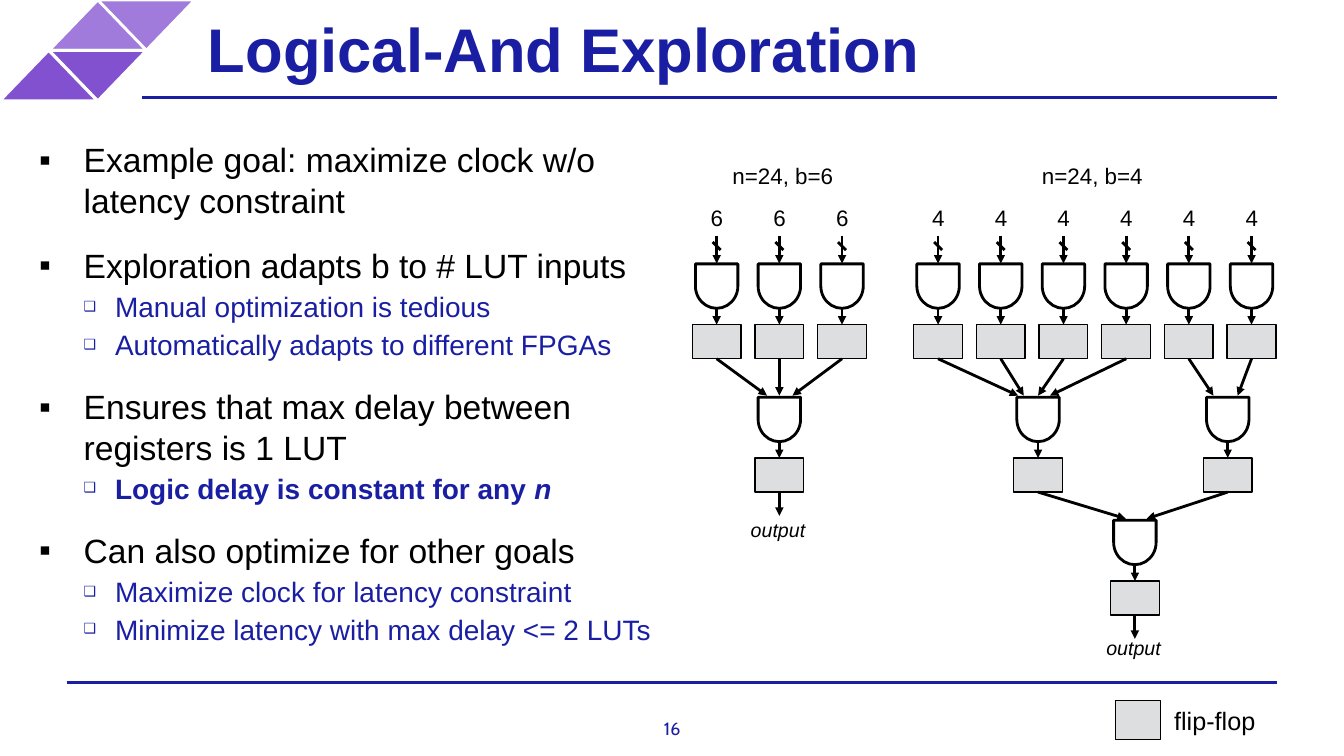
from dataclasses import dataclass

from lxml.etree import SubElement
from pptx import Presentation
from pptx.dml.color import RGBColor
from pptx.enum.shapes import MSO_CONNECTOR, MSO_SHAPE
from pptx.enum.text import MSO_ANCHOR as Anchor, PP_ALIGN as Align
from pptx.oxml.ns import qn
from pptx.util import Cm, Pt

NAVY, BLACK, WHITE, GREY = "191EA2", "000000", "FFFFFF", "DCDEE0"
LILAC, PURPLE = "A07BDB", "8151CF"
PITCH = 1.58  # distance between neighbouring gates
ROWS = (7.21, 10.57, 13.67)  # gate centres, top to bottom
GATE_LENGTH, GATE_WIDTH = 1.12, 1.07
FLOP_WIDTH, FLOP_HEIGHT, FLOP_DROP = 1.23, 0.86, 0.97


@dataclass
class Bullet:
    text: str
    level: int = 0
    bold: bool = False
    italic_end: str = ""


@dataclass
class Merge:
    """A gate fed by lower-numbered stages; tips are arrow offsets from its centre."""
    x: float
    row: int
    sources: tuple
    tips: tuple


@dataclass
class Tree:
    title: str
    title_x: float
    first_x: float
    inputs: int
    width: str
    merges: tuple
    output_gap: float


BULLETS = (
    Bullet("Example goal: maximize clock w/o latency constraint"),
    Bullet("Exploration adapts b to # LUT inputs"),
    Bullet("Manual optimization is tedious", 1),
    Bullet("Automatically adapts to different FPGAs", 1),
    Bullet("Ensures that max delay between registers is 1 LUT"),
    Bullet("Logic delay is constant for any ", 1, True, "n"),
    Bullet("Can also optimize for other goals"),
    Bullet("Maximize clock for latency constraint", 1),
    Bullet("Minimize latency with max delay <= 2 LUTs", 1),
)
TREES = (
    Tree("n=24, b=6", 18.31, 18.06, 3, "6",
         (Merge(19.64, 1, (0, 1, 2), (-0.31, 0, 0.33)),), 0.51),
    Tree("n=24, b=4", 26.11, 23.64, 6, "4",
         (Merge(26.16, 1, (0, 1, 2, 3), (-0.5, -0.36, 0, 0.3)),
          Merge(30.94, 1, (4, 5), (-0.36, 0.25)),
          Merge(28.6, 2, (6, 7), (-0.23, 0.3))), 0.38),
)


def color(value: str) -> RGBColor:
    return RGBColor.from_string(value)


def add_box(slide, kind, left: float, top: float, width: float, height: float,
            fill: str, line: str, weight: float, rotation: float = 0):
    shape = slide.shapes.add_shape(kind, Cm(left), Cm(top), Cm(width), Cm(height))
    shape.shadow.inherit = False
    shape.rotation = rotation
    shape.fill.solid()
    shape.fill.fore_color.rgb = color(fill)
    shape.line.color.rgb = color(line)
    shape.line.width = Pt(weight)
    return shape


def add_line(slide, x1: float, y1: float, x2: float, y2: float,
             line: str = BLACK, arrow: bool = True):
    connector = slide.shapes.add_connector(
        MSO_CONNECTOR.STRAIGHT, Cm(x1), Cm(y1), Cm(x2), Cm(y2))
    connector.line.color.rgb = color(line)
    connector.line.width = Pt(2)
    if arrow:
        SubElement(connector.line._get_or_add_ln(), qn("a:tailEnd"), type="triangle")
    SubElement(connector._element.spPr, qn("a:effectLst"))
    return connector


def format_run(run, size: float, fill: str, bold: bool = False,
               italic: bool = False, font: str = "Arial") -> None:
    run.font.name, run.font.size = font, Pt(size)
    run.font.bold, run.font.italic = bold, italic
    run.font.color.rgb = color(fill)


def add_frame(slide, left: float, top: float, width: float, height: float, inset: float):
    frame = slide.shapes.add_textbox(Cm(left), Cm(top), Cm(width), Cm(height)).text_frame
    frame.word_wrap = True
    frame.margin_left = frame.margin_right = Cm(inset)
    frame.margin_top = frame.margin_bottom = Cm(inset)
    return frame


def add_label(slide, text: str, left: float, top: float, width: float, height: float,
              size: float, fill: str = BLACK, inset: float = 0.15, **style):
    frame = add_frame(slide, left, top, width, height, inset)
    frame.vertical_anchor = Anchor.MIDDLE
    frame.text = text
    format_run(frame.paragraphs[0].runs[0], size, fill, **style)
    return frame.paragraphs[0]


def add_bullets(slide) -> None:
    frame = add_frame(slide, 0.84, 3.51, 16.15, 12.4, 0)
    frame.text = "\n".join(bullet.text for bullet in BULLETS)
    for index, (paragraph, bullet) in enumerate(zip(frame.paragraphs, BULLETS)):
        sub = bullet.level == 1
        properties = paragraph._p.get_or_add_pPr()
        properties.set("marL", str(Cm(2.06 if sub else 1.27)))
        properties.set("indent", str(Cm(-0.79 if sub else -1.12)))
        paragraph.level = bullet.level
        if sub:
            SubElement(properties, qn("a:buSzPct"), val="50000")
        SubElement(properties, qn("a:buFont"), typeface="Arial")
        SubElement(properties, qn("a:buChar"), char="❑" if sub else "▪")
        if index:
            paragraph.space_before = Pt(3 if sub else 18)
        if bullet.italic_end:
            paragraph.add_run().text = bullet.italic_end
        for position, run in enumerate(paragraph.runs):
            format_run(run, 20 if sub else 24, NAVY if sub else BLACK,
                       bullet.bold, position > 0)


def add_stage(slide, x: float, y: float):
    """Draw a gate centred at x, y with its flip-flop below; return the flip-flop."""
    add_box(slide, MSO_SHAPE.FLOWCHART_DELAY, x - GATE_LENGTH / 2, y - GATE_WIDTH / 2,
            GATE_LENGTH, GATE_WIDTH, WHITE, BLACK, 2, 90)
    flop = add_box(slide, MSO_SHAPE.RECTANGLE, x - FLOP_WIDTH / 2, y + FLOP_DROP,
                   FLOP_WIDTH, FLOP_HEIGHT, GREY, BLACK, 1)
    link = add_line(slide, x, y + GATE_LENGTH / 2, x, y + FLOP_DROP)
    link.end_connect(flop, 0)
    return flop


def add_tree(slide, tree: Tree) -> None:
    add_label(slide, tree.title, tree.title_x, 3.95, 3.05, 0.97, 16)
    flops = []
    for index in range(tree.inputs):
        x = tree.first_x + index * PITCH
        add_label(slide, tree.width, x - 0.3, 5, 0.66, 0.97, 16)
        add_line(slide, x, 5.94, x, 6.64)
        add_line(slide, x - 0.1, 6.1, x + 0.1, 6.3, arrow=False)
        flops.append(add_stage(slide, x, ROWS[0]))
    for merge in tree.merges:
        y = ROWS[merge.row]
        for source, tip in zip(merge.sources, merge.tips):
            feeder = add_line(slide, merge.x, y - 1.5, merge.x + tip, y - 0.6)
            feeder.begin_connect(flops[source], 2)
        flops.append(add_stage(slide, merge.x, y))
    # Output of the last stage
    x, bottom = merge.x, y + FLOP_DROP + FLOP_HEIGHT
    add_line(slide, x, bottom, x, bottom + 0.6).begin_connect(flops[-1], 2)
    add_label(slide, "output", x - 0.87, bottom + tree.output_gap, 2.24, 0.86, 14,
              italic=True)


def main() -> None:
    presentation = Presentation()
    presentation.slide_width, presentation.slide_height = Cm(33.87), Cm(19.05)
    slide = presentation.slides.add_slide(presentation.slide_layouts[6])

    # Frame: rules and corner triangles
    add_line(slide, 1.68, 17.2, 32.18, 17.2, NAVY, False)
    for left, top, fill, rotation in ((2.46, 0, LILAC, 180), (1.24, 0, LILAC, 0),
                                      (1.24, 1.27, PURPLE, 180), (0, 1.27, PURPLE, 0)):
        add_box(slide, MSO_SHAPE.ISOSCELES_TRIANGLE, left, top, 2.45, 1.27,
                fill, WHITE, 2, rotation)
    add_line(slide, 3.58, 2.46, 32.18, 2.46, NAVY, False)

    # Text
    add_label(slide, "Logical-And Exploration", 4.88, 0, 27.28, 2.41, 44, NAVY, 0.36,
              bold=True)
    number = add_label(slide, "16", 16.44, 18.08, 1, 0.53, 12.7, NAVY, 0, font="Cabin")
    number.alignment = Align.CENTER
    add_bullets(slide)

    # Diagrams and legend
    for tree in TREES:
        add_tree(slide, tree)
    add_box(slide, MSO_SHAPE.RECTANGLE, 28.12, 17.65, 1.12, 0.99, GREY, BLACK, 0.75)
    add_label(slide, "flip-flop", 29.44, 17.63, 3.2, 1.07, 18)

    presentation.save("out.pptx")


if __name__ == "__main__":
    main()
